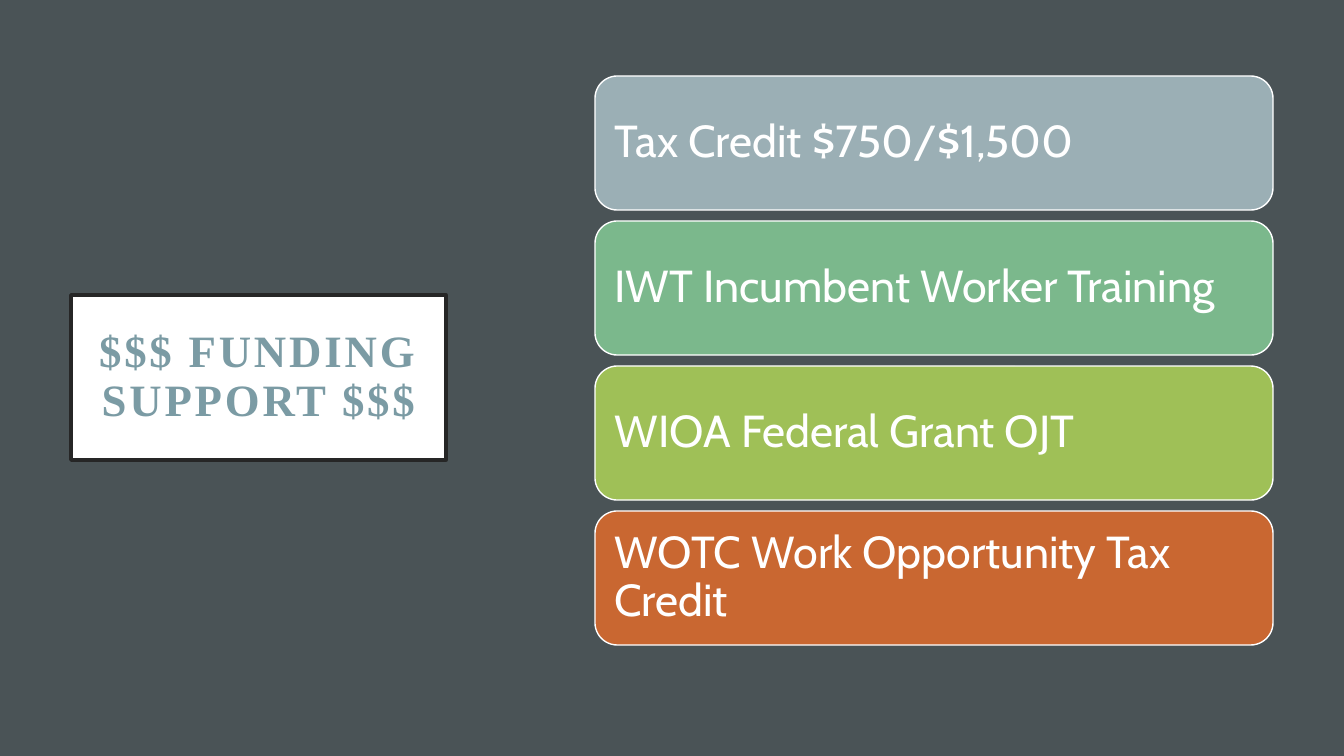
import pptx
import pptx.dml.color
import pptx.enum.shapes
import pptx.enum.text
import pptx.util
from lxml import etree
from pptx.oxml.ns import qn

# Content
TITLE = "$$$ FUNDING SUPPORT $$$"
PROGRAMS = [
    ("Tax Credit $750/$1,500", "9BAFB5"),
    ("IWT Incumbent Worker Training", "7BB88C"),
    ("WIOA Federal Grant OJT", "9FC057"),
    ("WOTC Work Opportunity Tax Credit", "C96731"),
]

THEME = {
    "background": "4A5356",
    "white": "FFFFFF",
    "title_border": "262626",
    "title_gradient": [(0, "B6D1D9"), (75, "7B9BA4"), (100, "658993")],
    "title_font": "Times New Roman",
    "card_font": "Cabin",
    "size": 32,
}

# Layout in px
SLIDE_SIZE = (1344, 756)
TITLE_BOX = (71, 295, 375, 165)
TITLE_INSET = 20
CARD_LEFT, CARD_TOP, CARD_WIDTH, CARD_HEIGHT = 595, 76, 678, 134
CARD_GAP = 11
CARD_INSET = 13
EMU_PER_PX = 914400 / 100.8

ALIGN = pptx.enum.text.PP_ALIGN


def px(length):
    return pptx.util.Emu(round(length * EMU_PER_PX))


def rgb(color):
    return pptx.dml.color.RGBColor.from_string(color)


def style_box(shape, fill, line, line_width):
    shape.fill.solid()
    shape.fill.fore_color.rgb = rgb(fill)
    shape.line.color.rgb = rgb(line)
    shape.line.width = pptx.util.Pt(line_width)


def set_gradient(run, stops):
    run.font.fill.gradient()
    run.font.fill.gradient_angle = 270
    stop_list = run.font._element.find(qn("a:gradFill")).find(qn("a:gsLst"))
    for old_stop in list(stop_list):
        stop_list.remove(old_stop)
    for position, color in stops:
        stop = etree.SubElement(stop_list, qn("a:gs"), pos=str(position * 1000))
        etree.SubElement(stop, qn("a:srgbClr"), val=color)


def write_text(shape, text, *, font, inset, align, color=None, gradient=None,
               bold=False, spacing=0):
    frame = shape.text_frame
    frame.word_wrap = True
    frame.auto_size = pptx.enum.text.MSO_AUTO_SIZE.NONE
    frame.vertical_anchor = pptx.enum.text.MSO_ANCHOR.MIDDLE
    frame.margin_left = frame.margin_right = px(inset)
    frame.margin_top = frame.margin_bottom = px(inset)
    paragraph = frame.paragraphs[0]
    paragraph.alignment = align
    paragraph.line_spacing = 0.9
    run = paragraph.add_run()
    run.text = text
    run.font.name = font
    run.font.size = pptx.util.Pt(THEME["size"])
    run.font.bold = bold
    if spacing:
        run.font._element.set("spc", str(spacing * 100))
    if gradient:
        set_gradient(run, gradient)
    else:
        run.font.color.rgb = rgb(color)


def add_title(slide):
    title = slide.shapes.title
    title.left, title.top, title.width, title.height = map(px, TITLE_BOX)
    style_box(title, THEME["white"], THEME["title_border"], 2.5)
    write_text(title, TITLE, font=THEME["title_font"], inset=TITLE_INSET,
               align=ALIGN.CENTER, gradient=THEME["title_gradient"],
               bold=True, spacing=2)


def add_cards(slide):
    for index, (text, fill) in enumerate(PROGRAMS):
        top = CARD_TOP + index * (CARD_HEIGHT + CARD_GAP)
        card = slide.shapes.add_shape(
            pptx.enum.shapes.MSO_SHAPE.ROUNDED_RECTANGLE,
            px(CARD_LEFT), px(top), px(CARD_WIDTH), px(CARD_HEIGHT))
        card.shadow.inherit = False
        style_box(card, fill, THEME["white"], 1)
        write_text(card, text, font=THEME["card_font"], inset=CARD_INSET,
                   align=ALIGN.LEFT, color=THEME["white"])


def main():
    presentation = pptx.Presentation()
    presentation.slide_width, presentation.slide_height = map(px, SLIDE_SIZE)
    slide = presentation.slides.add_slide(presentation.slide_layouts[5])
    slide.background.fill.solid()
    slide.background.fill.fore_color.rgb = rgb(THEME["background"])
    add_title(slide)
    add_cards(slide)
    presentation.save("out.pptx")


if __name__ == "__main__":
    main()
